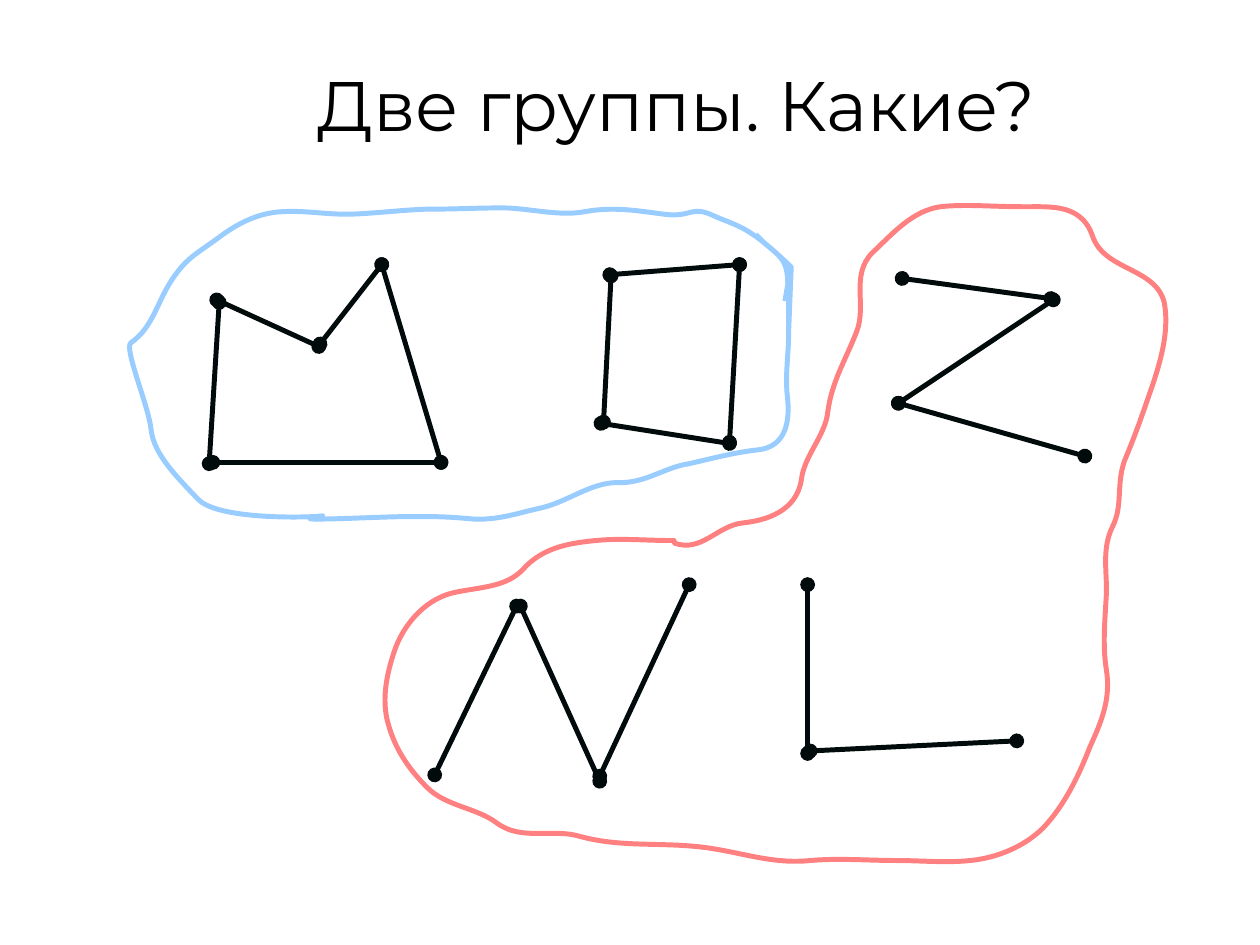
from dataclasses import dataclass

from lxml import etree
from pptx import Presentation
from pptx import util as u
from pptx.dml import color
from pptx.enum import shapes, text
from pptx.oxml import ns

PX = u.Inches(0.01)


@dataclass(frozen=True)
class Theme:
    ink: str = "010B0B"
    title: str = "000000"
    closed_group: str = "99CCFF"
    open_group: str = "FF8080"
    font: str = "Montserrat"
    title_size: int = 40
    line_width: float = 2.83


TITLE = "Две группы. Какие?"

SEGMENTS = [
    (174, 240, 166, 368), (169, 367, 350, 367), (303, 210, 350, 367),
    (172, 238, 253, 275), (303, 210, 254, 273),
    (485, 219, 479, 335), (477, 336, 579, 352), (484, 218, 587, 210),
    (587, 210, 579, 351),
    (716, 221, 834, 237), (836, 238, 713, 320), (713, 320, 861, 362),
    (410, 481, 345, 615), (413, 481, 476, 620), (476, 616, 547, 464),
    (641, 464, 641, 598), (643, 596, 807, 588),
]

CLOSED_START = (600, 186)
CLOSED_CURVES = [
    (613, 201, 623, 201, 625, 219), (626, 237, 626, 245, 626, 263),
    (626, 281, 623, 297, 625, 315), (628, 342, 619, 355, 602, 357),
    (583, 359, 565, 364, 547, 368), (527, 371, 512, 384, 490, 383),
    (469, 383, 451, 398, 430, 403), (412, 407, 395, 413, 376, 412),
    (354, 410, 348, 410, 326, 410), (307, 410, 271, 412, 252, 412),
    (231, 412, 271, 408, 250, 410), (229, 411, 171, 411, 157, 396),
    (142, 380, 122, 361, 120, 341), (118, 322, 98, 276, 104, 272),
    (120, 261, 124, 243, 134, 226), (147, 205, 154, 203, 173, 189),
    (189, 177, 205, 169, 224, 168), (242, 167, 257, 170, 275, 170),
    (293, 170, 324, 166, 342, 166), (363, 166, 378, 165, 399, 165),
    (419, 165, 444, 172, 464, 168), (487, 164, 504, 167, 527, 170),
    (550, 173, 548, 162, 568, 172), (587, 180, 595, 180, 628, 212),
]
CLOSED_TAIL = [(626, 262), (626, 221), (623, 239)]

OPEN_START = (532, 429)
OPEN_CURVES = [
    (512, 429, 493, 427, 473, 429), (453, 431, 431, 434, 415, 452),
    (402, 466, 381, 466, 362, 470), (340, 474, 322, 493, 314, 514),
    (308, 531, 303, 551, 307, 570), (312, 592, 323, 609, 339, 625),
    (354, 640, 378, 641, 394, 653), (414, 668, 438, 657, 461, 664),
    (494, 673, 527, 668, 562, 673), (590, 677, 614, 686, 643, 683),
    (666, 681, 689, 683, 712, 683), (731, 683, 751, 685, 770, 683),
    (791, 681, 813, 672, 828, 657), (845, 639, 856, 616, 865, 593),
    (874, 573, 882, 555, 878, 531), (875, 512, 877, 492, 878, 473),
    (879, 455, 874, 436, 883, 418), (892, 400, 885, 382, 894, 362),
    (902, 343, 908, 325, 915, 305), (922, 284, 928, 261, 924, 240),
    (917, 212, 876, 215, 867, 187), (857, 159, 829, 165, 807, 164),
    (787, 164, 767, 162, 747, 164), (724, 167, 708, 186, 692, 201),
    (675, 219, 688, 242, 680, 263), (672, 284, 660, 303, 657, 327),
    (655, 346, 638, 362, 636, 381), (632, 406, 608, 413, 590, 415),
    (569, 417, 557, 439, 535, 431),
]
OPEN_TAIL = [(535, 429), OPEN_START]


class Board:
    def __init__(self, slide, theme):
        self.slide = slide
        self.theme = theme

    def style_line(self, line, rgb):
        line.color.rgb = color.RGBColor.from_string(rgb)
        line.width = u.Pt(self.theme.line_width)

    def title(self, words, left, top, width, height):
        box = self.slide.shapes.add_textbox(*(n * PX for n in (left, top, width, height)))
        frame = box.text_frame
        frame.word_wrap = True
        frame.vertical_anchor = text.MSO_ANCHOR.MIDDLE
        frame.margin_left = 46 * PX
        frame.margin_top = 11 * PX
        paragraph = frame.paragraphs[0]
        paragraph.text = words
        paragraph.alignment = text.PP_ALIGN.CENTER
        paragraph.line_spacing = 1.01
        paragraph.font.name = self.theme.font
        paragraph.font.size = u.Pt(self.theme.title_size)
        paragraph.font.color.rgb = color.RGBColor.from_string(self.theme.title)

    def segment(self, *ends):
        connector = self.slide.shapes.add_connector(
            shapes.MSO_CONNECTOR.STRAIGHT, *(n * PX for n in ends))
        self.style_line(connector.line, self.theme.ink)
        outline = connector.line._get_or_add_ln()
        for end in ("a:headEnd", "a:tailEnd"):
            etree.SubElement(outline, ns.qn(end), type="oval")
        etree.SubElement(connector._element.spPr, ns.qn("a:effectLst"))

    def loop(self, start, curves, tail, rgb):
        controls = [curve[i:i + 2] for curve in curves for i in (0, 2, 4)]
        builder = self.slide.shapes.build_freeform(*start, scale=PX)
        builder.add_line_segments(controls + tail, close=False)
        shape = builder.convert_to_shape()
        self.bend(shape, len(curves))
        shape.shadow.inherit = False
        shape.fill.background()
        self.style_line(shape.line, rgb)

    def bend(self, shape, curve_count):
        steps = list(shape._element.iter(ns.qn("a:lnTo")))
        for first in range(0, 3 * curve_count, 3):
            curve = etree.Element(ns.qn("a:cubicBezTo"))
            steps[first].addprevious(curve)
            for step in steps[first:first + 3]:
                curve.append(step[0])
                step.getparent().remove(step)


def main():
    presentation = Presentation()
    presentation.slide_width = 1000 * PX
    presentation.slide_height = 750 * PX
    theme = Theme()
    board = Board(presentation.slides.add_slide(presentation.slide_layouts[6]), theme)
    board.title(TITLE, 161, 36, 716, 86)
    for segment in SEGMENTS:
        board.segment(*segment)
    board.loop(CLOSED_START, CLOSED_CURVES, CLOSED_TAIL, theme.closed_group)
    board.loop(OPEN_START, OPEN_CURVES, OPEN_TAIL, theme.open_group)
    presentation.save("out.pptx")


if __name__ == "__main__":
    main()
